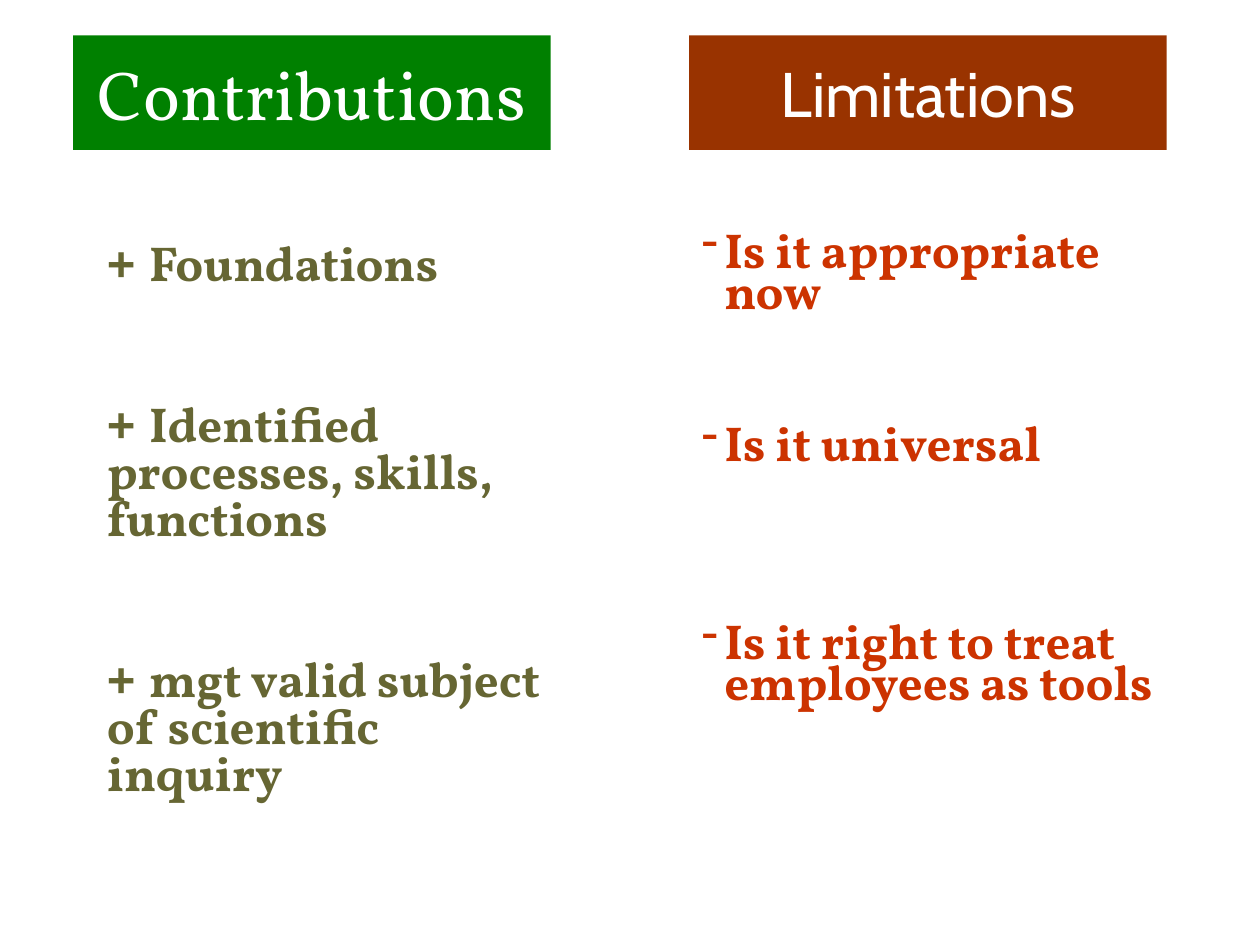
import pptx
import pptx.dml.color
import pptx.enum.shapes
import pptx.enum.text
import pptx.util
import lxml.etree
from pptx.oxml.ns import qn
from pptx.util import Inches, Pt

THEME = {
    "white": "FFFFFF", "green": "008000", "brown": "993300",
    "olive": "666633", "red": "CC3300",
    "title": 39.6, "heading": 36, "body": 28,
    "serif": "Vollkorn", "sans": "Cabin", "sign": "Arial",
}


def style(r, font, size, color, bold=False):
    r.font.name = THEME[font]
    r.font.size = Pt(THEME[size])
    r.font.bold = bold
    r.font.color.rgb = pptx.dml.color.RGBColor.from_string(THEME[color])


def add_body(s, left, top, width):
    tf = s.shapes.add_textbox(Inches(left), Inches(top), Inches(width), Inches(4.8)).text_frame
    tf.word_wrap = True
    return tf


prs = pptx.Presentation()
prs.slide_width, prs.slide_height = Inches(10), Inches(7.5)
s = prs.slides.add_slide(prs.slide_layouts[6])

# Column headings
for text, left, fill, font, size in [
    ("Contributions", 0.58, "green", "serif", "title"),
    ("Limitations", 5.47, "brown", "sans", "heading"),
]:
    sp = s.shapes.add_shape(pptx.enum.shapes.MSO_SHAPE.RECTANGLE,
                            Inches(left), Inches(0.28), Inches(3.79), Inches(0.91))
    sp.shadow.inherit = False
    sp.fill.solid()
    sp.fill.fore_color.rgb = pptx.dml.color.RGBColor.from_string(THEME[fill])
    sp.line.fill.background()
    tf = sp.text_frame
    tf.word_wrap = True
    tf.vertical_anchor = pptx.enum.text.MSO_ANCHOR.MIDDLE
    p = tf.paragraphs[0]
    p.text = text
    p.alignment = pptx.enum.text.PP_ALIGN.CENTER
    style(p.runs[0], font, size, "white")

# Contributions, each led by a plus sign
tf = add_body(s, 0.75, 1.89, 3.7)
for i, text in enumerate(["Foundations", "Identified processes, skills, functions",
                          "mgt valid subject of scientific inquiry"]):
    p = tf.paragraphs[0] if i == 0 else tf.add_paragraph()
    p.line_spacing = 0.8
    p.space_before = Pt(65 if i else 0)
    for part, font in [("+ ", "sign"), (text, "serif")]:
        r = p.add_run()
        r.text = part
        style(r, font, "body", "olive", True)

# Limitations, with dash bullets
tf = add_body(s, 5.47, 1.82, 3.94)
for i, (text, gap) in enumerate([("Is it appropriate now", 0), ("Is it universal", 63),
                                 ("Is it right to treat employees as tools", 90)]):
    p = tf.paragraphs[0] if i == 0 else tf.add_paragraph()
    p.text = text
    p.line_spacing = 0.7
    p.space_before = Pt(gap)
    pPr = p._p.get_or_add_pPr()
    pPr.set("marL", str(Inches(0.18)))
    pPr.set("indent", str(-Inches(0.18)))
    lxml.etree.SubElement(pPr, qn("a:buChar")).set("char", "-")
    style(p.runs[0], "serif", "body", "red", True)

prs.save("out.pptx")
